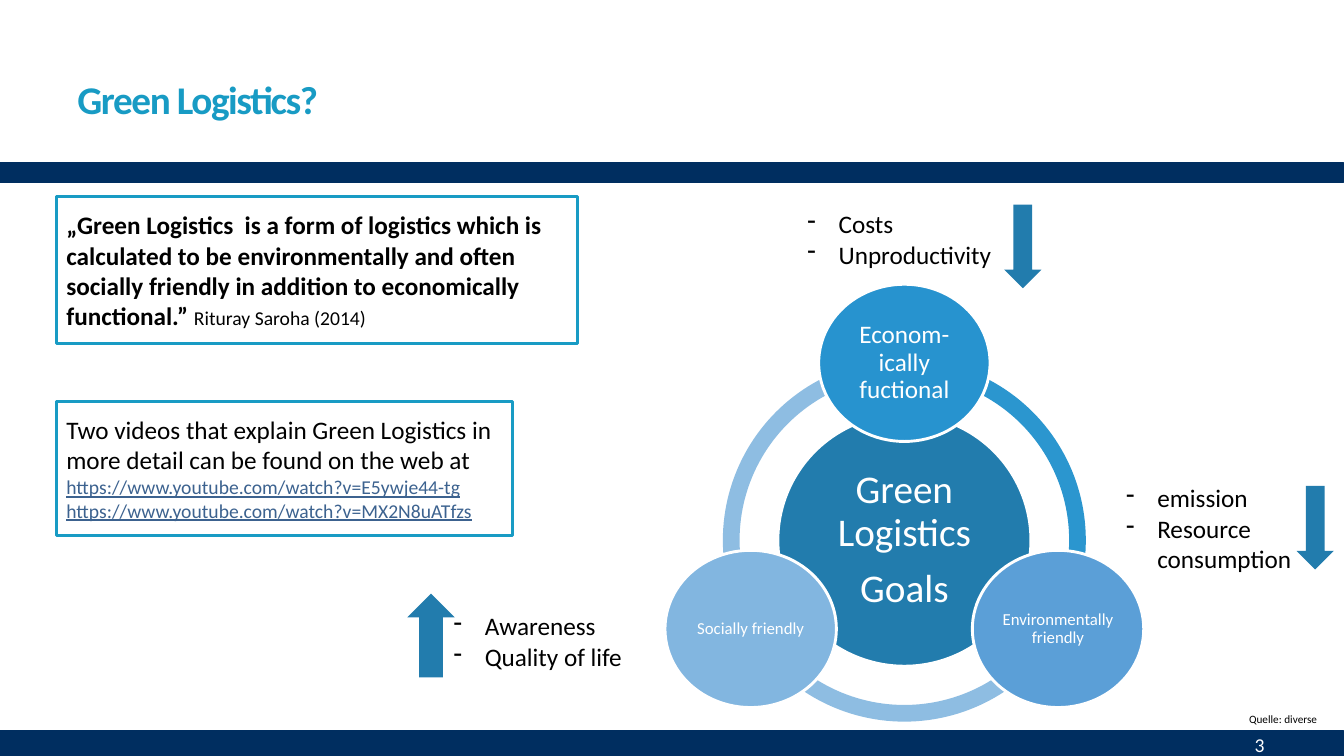
from dataclasses import dataclass
from math import cos, radians, sin

from lxml import etree
from pptx import Presentation
from pptx.dml.color import RGBColor
from pptx.enum.shapes import MSO_SHAPE
from pptx.enum.text import MSO_ANCHOR, PP_ALIGN
from pptx.oxml.ns import qn
from pptx.util import Inches, Pt

RECTANGLE, ELLIPSE, ARC = MSO_SHAPE.RECTANGLE, MSO_SHAPE.OVAL, MSO_SHAPE.BLOCK_ARC
UP, DOWN = MSO_SHAPE.UP_ARROW, MSO_SHAPE.DOWN_ARROW
TOP, MIDDLE = MSO_ANCHOR.TOP, MSO_ANCHOR.MIDDLE
LEFT, CENTER, RIGHT = PP_ALIGN.LEFT, PP_ALIGN.CENTER, PP_ALIGN.RIGHT


@dataclass(frozen=True)
class Theme:
    """Colours in RRGGBB and type sizes in points."""
    font: str = "Calibri"
    navy: str = "002E60"
    accent: str = "189BC4"
    core: str = "227CAD"
    economic: str = "2793CF"
    economic_arc: str = "2B96CF"
    environmental: str = "5B9FD7"
    social: str = "82B6E0"
    light_arc: str = "8EBDE2"
    link: str = "3C628F"
    white: str = "FFFFFF"
    black: str = "000000"
    heading: int = 28
    body: int = 18
    detail: int = 14
    label: int = 12
    source: int = 8


THEME = Theme()


def set_values(target, values):
    """Set every attribute of a target from a dict."""
    for name, value in values.items():
        setattr(target, name, value)


def add_run(paragraph, text, size, color=THEME.black, **styles):
    """Add one formatted run to a paragraph."""
    run = paragraph.add_run()
    run.text = text
    set_values(run.font, {"name": THEME.font, "size": Pt(size), **styles})
    run.font.color.rgb = RGBColor.from_string(color)
    return run


def format_frame(shape, anchor, inset=None):
    """Wrap and anchor the text of a shape, with an optional equal inset."""
    values = {"word_wrap": True, "vertical_anchor": anchor}
    if inset is not None:
        sides = ("left", "top", "right", "bottom")
        values.update({f"margin_{side}": Inches(inset) for side in sides})
    set_values(shape.text_frame, values)
    return shape.text_frame


def fill_paragraphs(frame, paragraphs, **values):
    """Write paragraphs, each a list of (text, size, colour, styles) runs."""
    for index, runs in enumerate(paragraphs):
        paragraph = frame.add_paragraph() if index else frame.paragraphs[0]
        set_values(paragraph, values)
        for text, size, color, styles in runs:
            add_run(paragraph, text, size, color, **styles)


def add_textbox(slide, box, paragraphs, anchor=TOP, alignment=LEFT):
    """Add a wrapping text box."""
    shape = slide.shapes.add_textbox(*map(Inches, box))
    fill_paragraphs(format_frame(shape, anchor), paragraphs, alignment=alignment)
    return shape


def add_shape(slide, kind, box, fill=None, line=None, width=2.08):
    """Add a preset shape without shadow."""
    shape = slide.shapes.add_shape(kind, *map(Inches, box))
    shape.shadow.inherit = False
    if fill:
        shape.fill.solid()
        shape.fill.fore_color.rgb = RGBColor.from_string(fill)
    else:
        shape.fill.background()
    if line:
        shape.line.color.rgb = RGBColor.from_string(line)
        shape.line.width = Pt(width)
    else:
        shape.line.fill.background()
    return shape


def add_framed_text(slide, box, paragraphs):
    """Add an outlined box of left-aligned text."""
    shape = add_shape(slide, RECTANGLE, box, line=THEME.accent, width=2.25)
    fill_paragraphs(format_frame(shape, MIDDLE), paragraphs, alignment=LEFT)


def add_circle(slide, center, size, fill, lines, text_size, inset):
    """Add a labelled ellipse around a centre point."""
    box = [middle - length / 2 for middle, length in zip(center, size)]
    shape = add_shape(slide, ELLIPSE, (*box, *size), fill, THEME.white)
    frame = format_frame(shape, MIDDLE, inset)
    paragraphs = [[(line, text_size, THEME.white, {})] for line in lines]
    fill_paragraphs(frame, paragraphs, alignment=CENTER, line_spacing=0.9)
    for paragraph in frame.paragraphs[1:]:
        paragraph.space_before = Pt(0.35 * text_size)


def add_dash_list(slide, box, items):
    """Add a list with dash bullets and a hanging indent."""
    paragraphs = [[(item, THEME.body, THEME.black, {})] for item in items]
    shape = add_textbox(slide, box, paragraphs)
    indent = Inches(0.31)
    for paragraph in shape.text_frame.paragraphs:
        properties = paragraph._p.get_or_add_pPr()
        properties.set("marL", str(indent))
        properties.set("indent", str(-indent))
        etree.SubElement(properties, qn("a:buChar")).set("char", "-")


def add_goal_ring(slide):
    """Draw the three arcs, the central circle and the three goals."""
    center, ring, orbit = (8.97, 5.36), 3.6, 1.76
    corner = [middle - ring / 2 for middle in center]
    arcs = ((150, THEME.light_arc), (30, THEME.light_arc), (270, THEME.economic_arc))
    for start, color in arcs:
        arc = add_shape(slide, ARC, (*corner, ring, ring), color)
        angles = (start, (start + 120) % 360)
        for index, angle in enumerate(angles):
            arc.adjustments[index] = angle * 0.6
        arc.adjustments[2] = 0.046
    add_circle(slide, center, (2.51, 2.5), THEME.core,
               ("Green Logistics", "Goals"), THEME.heading, 0.04)
    goals = (
        (270, THEME.economic, "Econom-ically fuctional", THEME.body, 0.03),
        (30, THEME.environmental, "Environmentally friendly", THEME.label, 0.02),
        (150, THEME.social, "Socially friendly", THEME.label, 0.02),
    )
    for angle, color, text, size, inset in goals:
        turn = radians(angle)
        place = (center[0] + orbit * cos(turn), center[1] + orbit * sin(turn))
        add_circle(slide, place, (1.7, 1.56), color, (text,), size, inset)


def add_effects(slide):
    """Add each list of effects with its rising or falling arrow."""
    effects = (
        ((4.4, 6.01, 2.44, 0.71), ("Awareness", "Quality of life"),
         UP, (4.04, 5.89, 0.47, 0.83)),
        ((7.91, 2.02, 2.76, 0.71), ("Costs", "Unproductivity"),
         DOWN, (9.96, 2.03, 0.37, 0.83)),
        ((11.07, 4.74, 2.26, 1.01), ("emission", "Resource consumption"),
         DOWN, (12.86, 4.82, 0.37, 0.83)),
    )
    for list_box, items, arrow, arrow_box in effects:
        add_dash_list(slide, list_box, items)
        add_shape(slide, arrow, arrow_box, THEME.core)


def main():
    """Build the slide and save it."""
    presentation = Presentation()
    set_values(presentation, {"slide_width": Inches(13.33), "slide_height": Inches(7.5)})
    slide = presentation.slides.add_slide(presentation.slide_layouts[6])
    for top, height in ((7.26, 0.24), (1.62, 0.18)):
        add_shape(slide, RECTANGLE, (0, top, 13.33, height), THEME.navy, THEME.navy)
    title = add_textbox(slide, (0.67, 0.44, 6.94, 1.08), [
        [("Green Logistics?", THEME.heading, THEME.accent, {"bold": True})]], MIDDLE)
    title.text_frame.paragraphs[0].runs[0].font._element.set("spc", "-100")
    add_textbox(slide, (11.08, 7.21, 1.56, 0.36),
                [[("3", THEME.detail, THEME.white, {})]], MIDDLE, RIGHT)
    add_framed_text(slide, (0.56, 1.95, 5.17, 1.46), [[
        ("„Green Logistics  is a form of logistics which is calculated to be "
         "environmentally and often socially friendly in addition to economically "
         "functional.” ", THEME.body, THEME.black, {"bold": True}),
        ("Rituray Saroha (2014)", THEME.detail, THEME.black, {})]])
    add_goal_ring(slide)
    add_effects(slide)
    add_textbox(slide, (12.29, 7.02, 1.04, 0.24),
                [[("Quelle: diverse", THEME.source, THEME.black, {})]])
    videos = ("E5ywje44-tg", "MX2N8uATfzs")
    add_framed_text(slide, (0.56, 3.98, 4.52, 1.33), [
        [("Two videos that explain Green Logistics in more detail can be found on "
          "the web at", THEME.body, THEME.black, {})],
        *[[(f"https://www.youtube.com/watch?v={video}", THEME.detail, THEME.link,
            {"underline": True})] for video in videos]])
    presentation.save("out.pptx")


if __name__ == "__main__":
    main()
